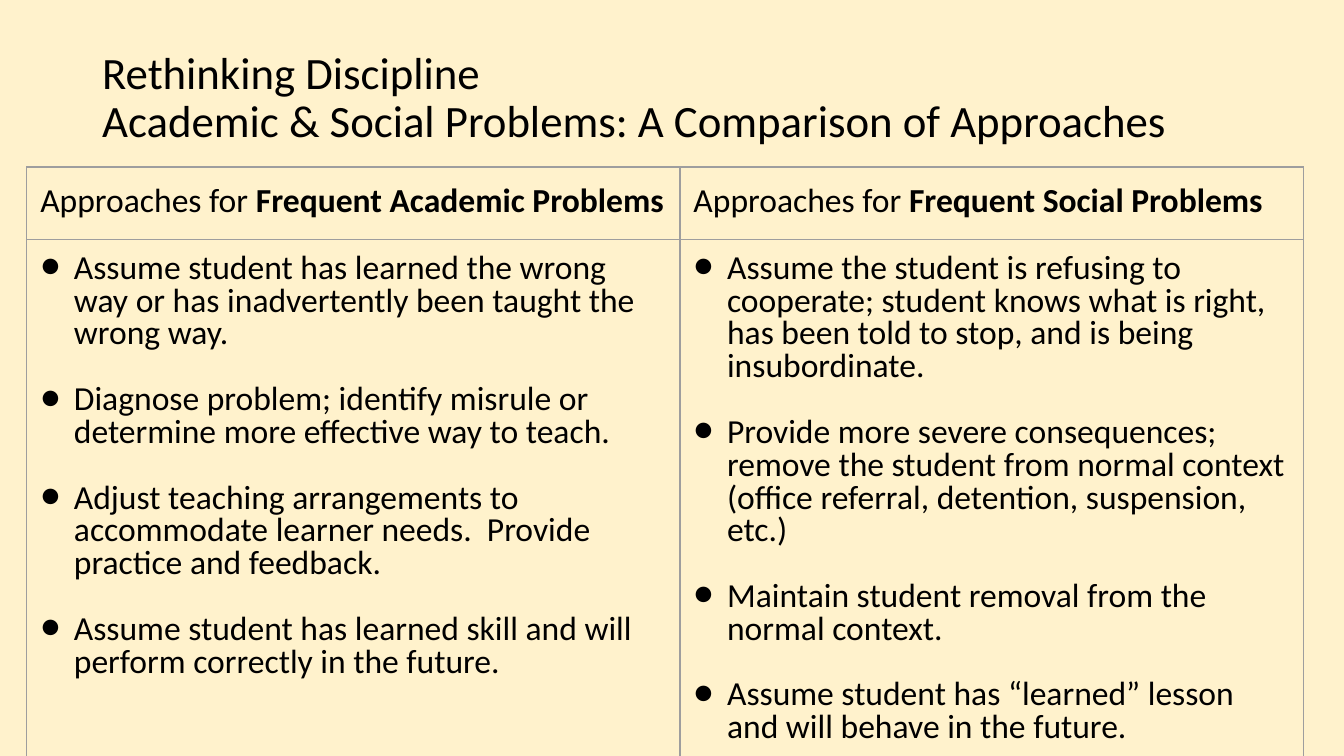
"""Builds a slide comparing approaches to academic and social problems."""
import pptx
import pptx.dml.color
import pptx.enum.text
import pptx.oxml
import pptx.oxml.ns
import pptx.util

COLORS = {"background": "FFF2CC", "text": "000000", "border": "9E9E9E"}

TITLE = ["Rethinking Discipline", "Academic & Social Problems: A Comparison of Approaches"]

APPROACHES = {
    "Frequent Academic Problems": [
        "Assume student has learned the wrong way or has inadvertently been taught the wrong way.",
        "Diagnose problem; identify misrule or determine more effective way to teach.",
        "Adjust teaching arrangements to accommodate learner needs.  Provide practice and feedback.",
        "Assume student has learned skill and will perform correctly in the future.",
    ],
    "Frequent Social Problems": [
        "Assume the student is refusing to cooperate; student knows what is right, "
        "has been told to stop, and is being insubordinate.",
        "Provide more severe consequences; remove the student from normal context "
        "(office referral, detention, suspension, etc.)",
        "Maintain student removal from the normal context.",
        "Assume student has “learned” lesson and will behave in the future.",
    ],
}


class ComparisonSlide:
    """Holds the style and the current slide; lengths are percentages of the slide's size."""

    font_name = "Calibri"
    title_size = 24
    body_size = 18
    body_gap = 17.6

    def __init__(self, presentation):
        self.width = presentation.slide_width
        self.height = presentation.slide_height
        self.slide = presentation.slides.add_slide(presentation.slide_layouts[5])
        backdrop = self.slide.background.fill
        backdrop.solid()
        backdrop.fore_color.rgb = self.color("background")

    def color(self, name):
        return pptx.dml.color.RGBColor.from_string(COLORS[name])

    def across(self, percent):
        return round(self.width * percent / 100)

    def down(self, percent):
        return round(self.height * percent / 100)

    def style(self, paragraph, size, spacing=1.0):
        paragraph.alignment = pptx.enum.text.PP_ALIGN.LEFT
        paragraph.line_spacing = spacing
        paragraph.font.name = self.font_name
        paragraph.font.size = pptx.util.Pt(size)
        paragraph.font.color.rgb = self.color("text")

    def title(self, lines, left, top, width, height):
        heading = self.slide.shapes.title
        heading.left, heading.width = self.across(left), self.across(width)
        heading.top, heading.height = self.down(top), self.down(height)
        frame = heading.text_frame
        frame.text = "\n".join(lines)
        frame.word_wrap = True
        frame.auto_size = pptx.enum.text.MSO_AUTO_SIZE.NONE
        frame.vertical_anchor = pptx.enum.text.MSO_ANCHOR.MIDDLE
        frame.margin_left = frame.margin_right = pptx.util.Inches(0.07)
        frame.margin_top = frame.margin_bottom = pptx.util.Inches(0.04)
        for paragraph in frame.paragraphs:
            self.style(paragraph, self.title_size, 0.9)

    def table(self, approaches, left, top, columns, rows):
        grid = self.slide.shapes.add_table(
            len(rows), len(columns), self.across(left), self.down(top),
            self.across(sum(columns)), self.down(sum(rows))).table
        grid.first_row = grid.horz_banding = False
        for row, share in zip(grid.rows, rows):
            row.height = self.down(share)
        for index, (problems, steps) in enumerate(approaches.items()):
            grid.columns[index].width = self.across(columns[index])
            self.heading(grid.cell(0, index), problems)
            self.steps(grid.cell(1, index), steps)
        for cell in grid.iter_cells():
            self.frame(cell)

    def heading(self, cell, problems):
        paragraph = cell.text_frame.paragraphs[0]
        self.style(paragraph, self.body_size)
        paragraph.add_run().text = "Approaches for "
        emphasis = paragraph.add_run()
        emphasis.text = problems
        emphasis.font.bold = True

    def steps(self, cell, steps):
        cell.text_frame.text = "\n".join(steps)
        for index, paragraph in enumerate(cell.text_frame.paragraphs):
            self.style(paragraph, self.body_size, 0.8)
            paragraph.space_before = pptx.util.Pt(self.body_gap if index else 0)
            self.bullet(paragraph)

    def bullet(self, paragraph):
        indent = pptx.util.Inches(0.25)
        properties = paragraph._p.get_or_add_pPr()
        properties.set("marL", str(indent))
        properties.set("indent", str(-indent))
        namespace = pptx.oxml.ns.nsdecls("a")
        defaults = properties.find(pptx.oxml.ns.qn("a:defRPr"))
        for markup in (
            f'<a:buClr {namespace}><a:srgbClr val="{COLORS["text"]}"/></a:buClr>',
            f'<a:buFont {namespace} typeface="{self.font_name}"/>',
            f'<a:buChar {namespace} char="●"/>',
        ):
            defaults.addprevious(pptx.oxml.parse_xml(markup))

    def frame(self, cell):
        cell.margin_left = cell.margin_right = pptx.util.Inches(0.1)
        cell.margin_top = cell.margin_bottom = pptx.util.Inches(0.1)
        properties = cell._tc.get_or_add_tcPr()
        for side in "LRTB":
            properties.append(pptx.oxml.parse_xml(
                f'<a:ln{side} {pptx.oxml.ns.nsdecls("a")} w="{pptx.util.Pt(0.75)}">'
                f'<a:solidFill><a:srgbClr val="{COLORS["border"]}"/></a:solidFill></a:ln{side}>'))
        cell.fill.background()


def main():
    presentation = pptx.Presentation()
    presentation.slide_width = pptx.util.Inches(10)
    presentation.slide_height = presentation.slide_width * 9 // 16
    comparison = ComparisonSlide(presentation)
    comparison.title(TITLE, left=6.9, top=3.4, width=86.2, height=19.4)
    comparison.table(APPROACHES, left=2, top=22.1, columns=[48.6, 46.4], rows=[9.6, 69.4])
    presentation.save("out.pptx")


if __name__ == "__main__":
    main()
